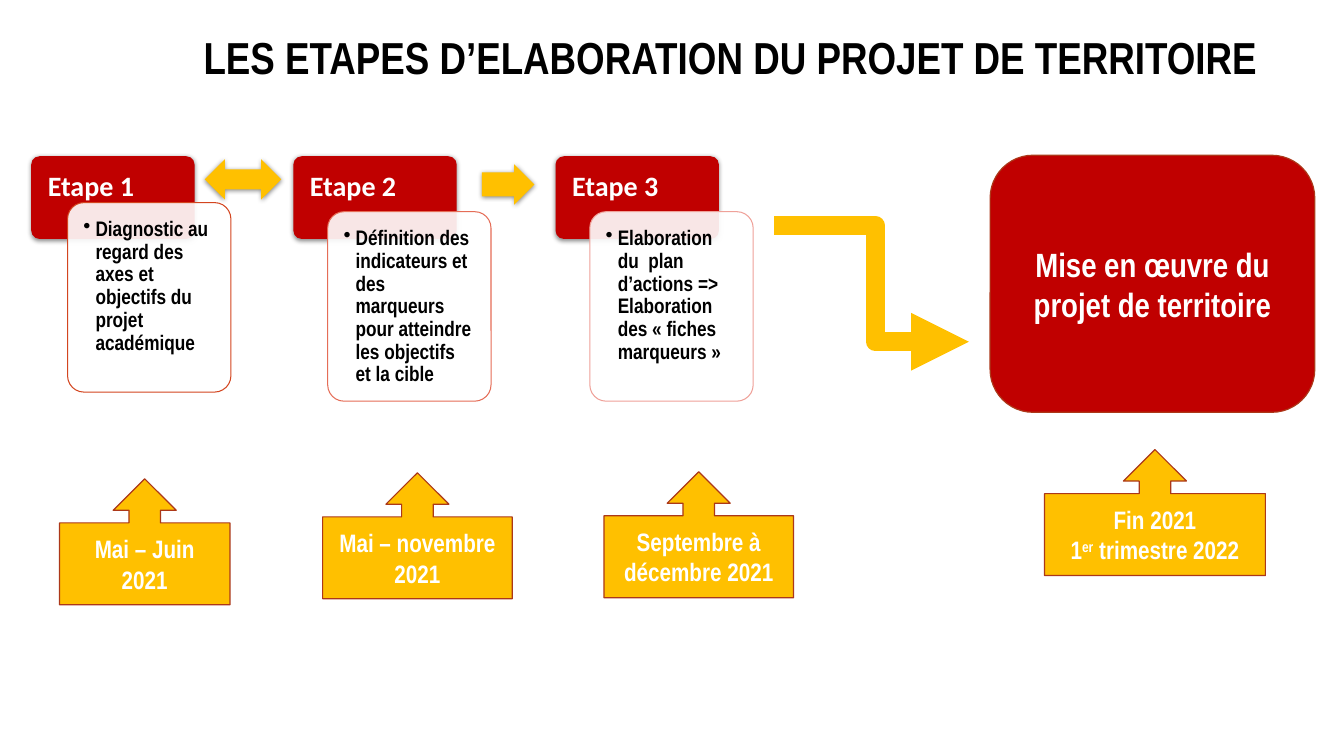
from pptx import Presentation, util as u
from pptx.dml.color import RGBColor
from pptx.enum import shapes, text
from pptx.oxml import parse_xml
from pptx.oxml.ns import nsdecls, qn
from pptx.oxml.xmlchemy import OxmlElement

KIND = shapes.MSO_SHAPE
ALIGN = text.PP_ALIGN
ANCHOR = text.MSO_ANCHOR


def color(code):
    return RGBColor.from_string(code)


def box(left, top, width, height):
    return [u.Inches(n) for n in (left, top, width, height)]


def write(frame, words, size=18, font="Arial Narrow", ink="FFFFFF", align=ALIGN.CENTER,
          anchor=ANCHOR.MIDDLE, pads=(0.1, 0.05, 0.1, 0.05), space=1, bullet=False):
    """Fill a frame, one paragraph per line, with ^marks^ around superscripts."""
    frame.word_wrap = True
    frame.auto_size = text.MSO_AUTO_SIZE.NONE
    frame.vertical_anchor = anchor
    (frame.margin_left, frame.margin_top,
     frame.margin_right, frame.margin_bottom) = box(*pads)
    for row, line in enumerate(words.split("\n")):
        para = frame.add_paragraph() if row else frame.paragraphs[0]
        para.alignment = align
        para.line_spacing = space
        if bullet:
            props = para._p.get_or_add_pPr()
            props.set("marL", str(u.Inches(0.12)))
            props.set("indent", str(u.Inches(-0.12)))
            mark = OxmlElement("a:buChar")
            mark.set("char", "•")
            props.append(mark)
        for part, piece in enumerate(line.split("^")):
            run = para.add_run()
            run.text = piece
            run.font.size = u.Pt(size)
            run.font.name = font
            run.font.bold = True
            run.font.color.rgb = color(ink)
            if part % 2:
                run._r.get_or_add_rPr().set("baseline", "30000")


class Slide:
    """Hold the style of the deck and draw on its current slide."""
    red, gold, white, black, edge = "C00000", "FFC000", "FFFFFF", "000000", "AC3819"

    def __init__(self, deck):
        self.page = deck.slides.add_slide(deck.slide_layouts[5])

    def title(self, words, place):
        head = self.page.shapes.title
        head.left, head.top, head.width, head.height = box(*place)
        write(head.text_frame, words, size=32, ink=self.black)

    def shape(self, kind, place, fill, line=None, width=0.85, shadow=False, adjust=()):
        item = self.page.shapes.add_shape(kind, *box(*place))
        item.fill.solid()
        item.fill.fore_color.rgb = color(fill)
        if line:
            item.line.color.rgb = color(line)
            item.line.width = u.Pt(width)
        else:
            item.line.fill.background()
        for spot, value in enumerate(adjust):
            item.adjustments[spot] = value
        item.shadow.inherit = False
        if shadow:
            item._element.spPr.find(qn("a:effectLst")).append(parse_xml(
                f'<a:outerShdw {nsdecls("a")} blurRad="{u.Pt(3.5)}" dist="{u.Pt(1.1)}" '
                'dir="5400000" rotWithShape="0"><a:srgbClr val="000000">'
                '<a:alpha val="45000"/></a:srgbClr></a:outerShdw>'))
        return item

    def step(self, name, words, left, card, top, line):
        head = self.shape(KIND.ROUNDED_RECTANGLE, (left, 1.55, 1.62, 0.82), self.red,
                          shadow=True, adjust=[0.1])
        write(head.text_frame, name, size=20, font="Calibri", align=ALIGN.LEFT,
              anchor=ANCHOR.TOP, pads=(0.14, 0.14, 0.14, 0.34), space=0.9)
        body = self.shape(KIND.ROUNDED_RECTANGLE, (card, top, 1.62, 1.88), self.white,
                          line, 0.75, adjust=[0.1])
        alpha = OxmlElement("a:alpha")
        alpha.set("val", "90000")
        body._element.spPr.find(qn("a:solidFill"))[0].append(alpha)
        write(body.text_frame, words, size=15, ink=self.black, align=ALIGN.LEFT,
              anchor=ANCHOR.TOP, pads=[0.11] * 4, space=0.9, bullet=True)

    def arrow(self, kind, place, adjust=()):
        self.shape(kind, place, self.gold, shadow=True, adjust=adjust)

    def goal(self, words, place):
        item = self.shape(KIND.ROUNDED_RECTANGLE, place, self.red, self.edge)
        write(item.text_frame, words, size=24, pads=(0.1, 0.05, 0.1, 0.05))

    def date(self, words, left, top, width):
        item = self.shape(KIND.UP_ARROW_CALLOUT, (left, top, width, 1.25),
                          self.gold, self.edge)
        write(item.text_frame, words)

    def bend(self, start, end, turn):
        link = self.page.shapes.add_connector(shapes.MSO_CONNECTOR.ELBOW, *box(*start, *end))
        link.line.color.rgb = color(self.gold)
        link.line.width = u.Pt(13.75)
        tip = OxmlElement("a:tailEnd")
        tip.set("type", "triangle")
        link.line._get_or_add_ln().append(tip)
        props = link._element.spPr
        props.append(OxmlElement("a:effectLst"))
        guide = OxmlElement("a:gd")
        guide.set("name", "adj1")
        guide.set("fmla", f"val {round(turn * 100000)}")
        props.find(qn("a:prstGeom")).get_or_add_avLst().append(guide)


def main():
    deck = Presentation()
    deck.slide_width, deck.slide_height = u.Inches(13.33), u.Inches(7.5)
    slide = Slide(deck)
    slide.title("LES ETAPES D’ELABORATION DU PROJET DE TERRITOIRE", (1.47, 0.24, 11.56, 0.64))
    steps = [
        ("Diagnostic au regard des axes et objectifs du projet académique",
         0.67, 2.01, "D3451F"),
        ("Définition des indicateurs et des marqueurs pour atteindre les objectifs et la cible",
         3.25, 2.1, "E56D57"),
        ("Elaboration du  plan d’actions => Elaboration des « fiches marqueurs »",
         5.85, 2.1, "EFA199"),
    ]
    for index, (words, card, top, line) in enumerate(steps):
        slide.step(f"Etape {index + 1}", words, 0.31 + 2.6 * index, card, top, line)
    slide.arrow(KIND.LEFT_RIGHT_ARROW, (2.03, 1.58, 0.76, 0.4))
    slide.arrow(KIND.RIGHT_ARROW, (4.78, 1.63, 0.52, 0.4), [0.6, 0.5])
    slide.goal("Mise en œuvre du projet de territoire", (9.82, 1.54, 3.22, 2.55))
    dates = [
        ("Mai – Juin 2021", 0.59, 4.75, 1.69),
        ("Mai – novembre 2021", 3.2, 4.69, 1.88),
        ("Septembre à décembre 2021", 5.99, 4.68, 1.88),
        ("Fin 2021\n1^er^ trimestre 2022", 10.36, 4.46, 2.19),
    ]
    for date in dates:
        slide.date(*date)
    slide.bend((7.68, 2.24), (9.61, 3.39), 0.52)
    deck.save("out.pptx")


if __name__ == "__main__":
    main()
